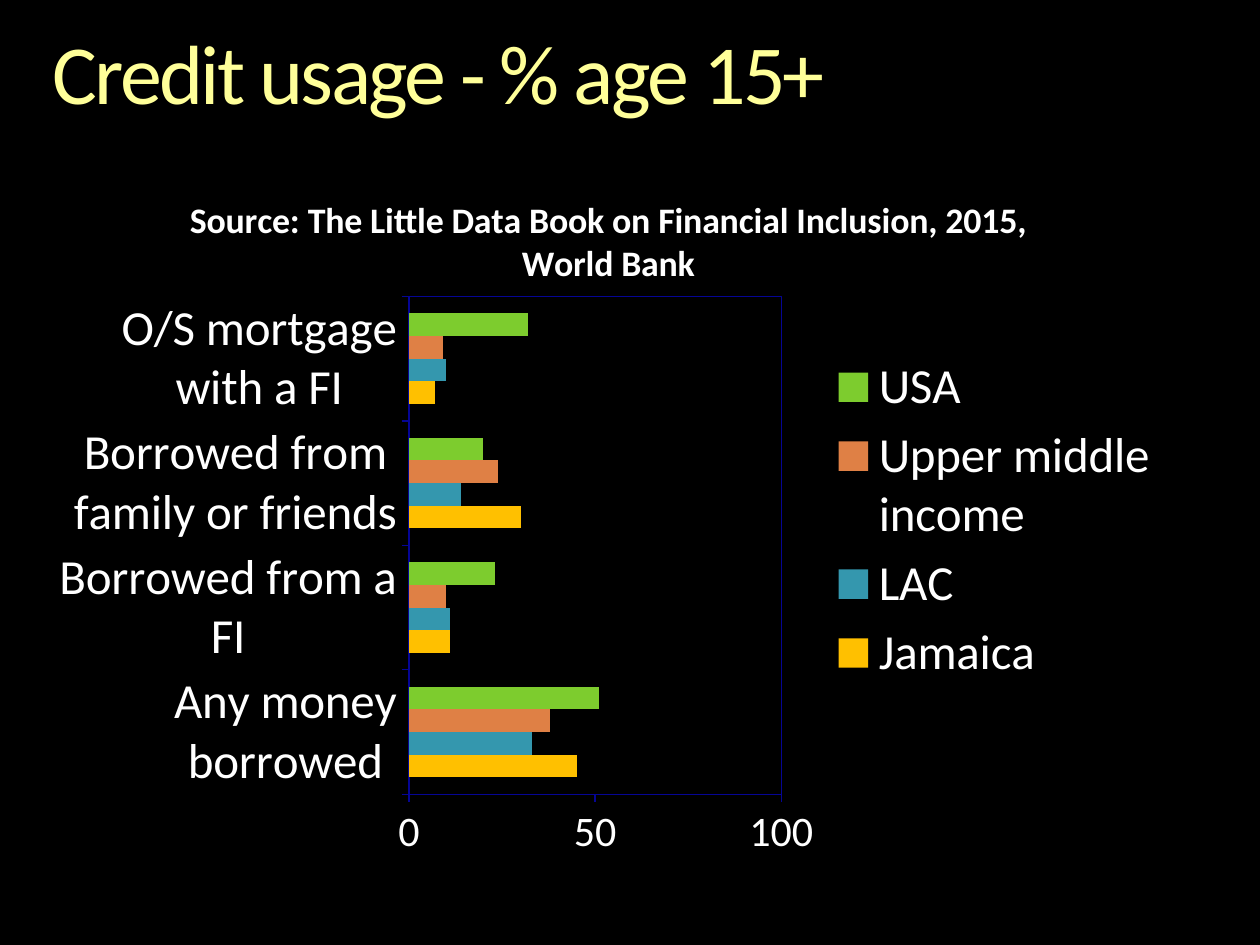
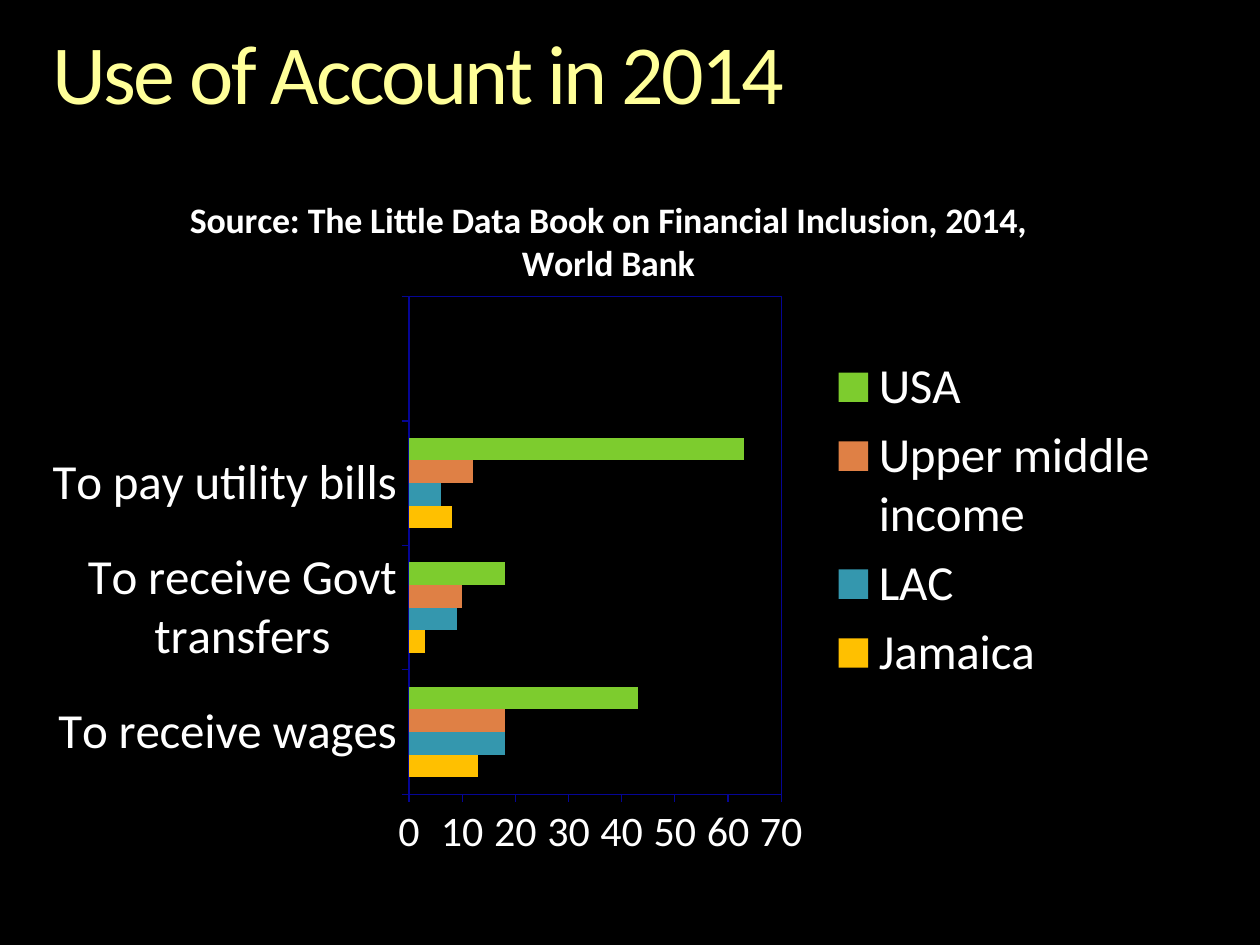
import pptx
import pptx.chart.data
import pptx.dml.color
import pptx.enum.chart
import pptx.enum.text
import pptx.oxml
import pptx.oxml.ns
import pptx.util

Pt = pptx.util.Pt
Color = pptx.dml.color.RGBColor.from_string
chart_enums = pptx.enum.chart

# Content: values run in the order of GROUPS, one list per group
GROUPS = ["Jamaica", "LAC", "Upper middle income", "USA"]
SOURCE = "Source: The Little Data Book on Financial Inclusion, {}, World Bank"
PAGES = [
    {
        "title": "Credit usage - % age 15+",
        "year": 2015,
        "scale": {"minimum_scale": 0, "maximum_scale": 100, "major_unit": 50},
        "categories": ["Any money borrowed", "Borrowed from a FI",
                       "Borrowed from family or friends", "O/S mortgage with a FI"],
        "values": [[45, 11, 30, 7], [33, 11, 14, 10], [38, 10, 24, 9], [51, 23, 20, 32]],
    },
    {
        "title": "Use of Account in 2014",
        "year": 2014,
        "scale": {"minimum_scale": 0, "maximum_scale": 70, "major_unit": 10},
        "categories": ["To receive wages", "To receive Govt transfers",
                       "To pay utility bills", ""],
        "values": [[13, 3, 8, None], [18, 9, 6, None], [18, 10, 12, None], [43, 18, 63, None]],
    },
]

THEME = {
    "font": "Calibri",
    "background": "000000",
    "title": "FFFF99",
    "text": "FFFFFF",
    "axis": "050595",
    "groups": ["FFC000", "3497AE", "DF8045", "7DCC2E"],
    "title_size": 48,
    "source_size": 20.5,
    "label_size": 28,
    "scale_size": 24,
    "base_size": 18,
}

# Places in points; layouts as fractions of the chart
TITLE_PLACE = (30, 18, 660, 52.5)
CHART_PLACE = (27.5, 91, 644.5, 412.5)
SOURCE_LAYOUT = {"x": 0.12, "y": 0.04}
PLOT_LAYOUT = {"x": 0.32, "y": 0.19, "w": 0.33, "h": 0.69}


def apply(target, values):
    for name, value in values.items():
        setattr(target, name, value)


def style_font(font, size, color, **extra):
    apply(font, {"name": THEME["font"], "size": Pt(size), **extra})
    font.fill.solid()
    font.fill.fore_color.rgb = Color(color)


def layout_element(places, inner=False):
    target = '<c:layoutTarget val="inner"/>' if inner else ""
    modes = "".join(f'<c:{key}Mode val="edge"/>' for key in "xy")
    sizes = "".join(f'<c:{key} val="{value}"/>' for key, value in places.items())
    return pptx.oxml.parse_xml(
        f'<c:layout {pptx.oxml.ns.nsdecls("c")}><c:manualLayout>'
        f"{target}{modes}{sizes}</c:manualLayout></c:layout>")


def add_title(page, text):
    box = page.shapes.add_textbox(*map(Pt, TITLE_PLACE))
    frame = box.text_frame
    apply(frame, {"word_wrap": True, "margin_left": 0, "margin_right": 0,
                  "margin_top": 0, "margin_bottom": 0,
                  "vertical_anchor": pptx.enum.text.MSO_ANCHOR.TOP})
    para = frame.paragraphs[0]
    para.line_spacing = 0.9
    span = para.add_run()
    span.text = text
    style_font(span.font, THEME["title_size"], THEME["title"])
    span.font._element.set("spc", "-150")


def style_axis(axis, size):
    apply(axis, {"has_major_gridlines": False,
                 "major_tick_mark": chart_enums.XL_TICK_MARK.OUTSIDE,
                 "minor_tick_mark": chart_enums.XL_TICK_MARK.NONE})
    style_font(axis.tick_labels.font, size, THEME["text"])
    axis.format.line.width = Pt(0.75)
    axis.format.line.color.rgb = Color(THEME["axis"])


def place_chart_parts(chart):
    """Fix the plot and source line, and frame the plot."""
    space = chart._chartSpace
    for old in space.xpath(".//c:title/c:layout | .//c:plotArea/c:layout"):
        old.getparent().remove(old)
    space.xpath(".//c:title/c:tx")[0].addnext(layout_element(SOURCE_LAYOUT))
    plot_area = space.xpath(".//c:plotArea")[0]
    plot_area.insert(0, layout_element(PLOT_LAYOUT, inner=True))
    fills = [f'<a:solidFill><a:srgbClr val="{THEME[key]}"/></a:solidFill>'
             for key in ("background", "axis")]
    plot_area.append(pptx.oxml.parse_xml(
        f'<c:spPr {pptx.oxml.ns.nsdecls("c", "a")}>{fills[0]}'
        f'<a:ln w="{Pt(0.5)}">{fills[1]}</a:ln></c:spPr>'))


def add_bar_chart(page, content):
    data = pptx.chart.data.CategoryChartData()
    data.categories = content["categories"]
    for group, values in zip(GROUPS, content["values"]):
        data.add_series(group, values)
    chart = page.shapes.add_chart(
        chart_enums.XL_CHART_TYPE.BAR_CLUSTERED, *map(Pt, CHART_PLACE), data).chart
    style_font(chart.font, THEME["base_size"], THEME["text"])

    # Source line above the plot
    chart.has_title = True
    frame = chart.chart_title.text_frame
    frame.text = SOURCE.format(content["year"])
    style_font(frame.paragraphs[0].runs[0].font, THEME["source_size"], THEME["text"], bold=True)

    # Legend and axes
    chart.has_legend = True
    apply(chart.legend, {"position": chart_enums.XL_LEGEND_POSITION.RIGHT,
                         "include_in_layout": False})
    style_font(chart.legend.font, THEME["label_size"], THEME["text"])
    style_axis(chart.category_axis, THEME["label_size"])
    style_axis(chart.value_axis, THEME["scale_size"])
    apply(chart.value_axis, content["scale"])

    # Bars
    plot = chart.plots[0]
    apply(plot, {"gap_width": 150, "overlap": 0, "vary_by_categories": False})
    for series, color in zip(plot.series, THEME["groups"]):
        series.format.fill.solid()
        series.format.fill.fore_color.rgb = Color(color)
    place_chart_parts(chart)


def main():
    deck = pptx.Presentation()
    apply(deck, {"slide_width": Pt(720), "slide_height": Pt(540)})
    for content in PAGES:
        page = deck.slides.add_slide(deck.slide_layouts[6])
        page.background.fill.solid()
        page.background.fill.fore_color.rgb = Color(THEME["background"])
        add_title(page, content["title"])
        add_bar_chart(page, content)
    deck.save("out.pptx")


if __name__ == "__main__":
    main()
